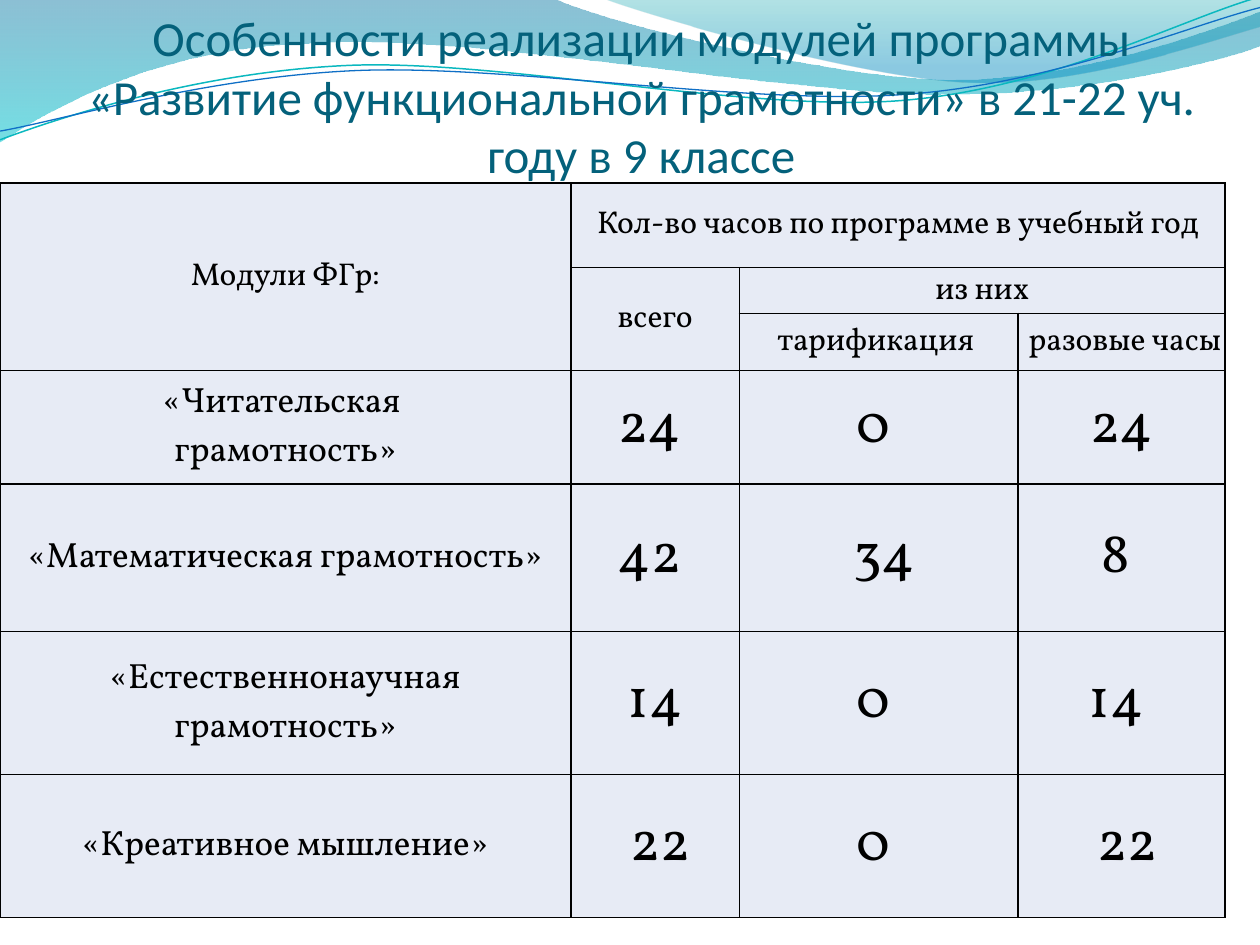
"""Builds the slide on the functional literacy modules of grade 9."""
from lxml.etree import SubElement
from pptx import Presentation
from pptx.dml.color import RGBColor
from pptx.enum.text import MSO_ANCHOR, PP_ALIGN
from pptx.oxml.ns import qn
from pptx.util import Pt

COLORS = {
    "title": "04617B", "text": "000000", "border": "000000", "cell": "E7EBF5",
    "blue": "0074A1", "cyan": "00C6CF", "teal": "00A1A9", "azure": "008BBF",
    "teal line": "0AB8BF", "blue line": "0F6FC6",
}
TITLE = "Особенности реализации модулей программы «Развитие функциональной грамотности» в 21-22 уч. году в 9 классе"
COLUMN_WIDTHS = [326.2, 96.4, 159.2, 118.4]
ROW_HEIGHTS = [48.4, 26.2, 32.6, 65, 84.2, 81.7, 81.7]
HEADER_ROWS = 3
ROWS = [
    ["Модули ФГр:", "Кол-во часов по программе в учебный год", "", ""],
    ["", "всего", "из них", ""],
    ["", "", "тарификация ", " разовые часы"],
    ["«Читательская \nграмотность»", "24 ", "0 ", "24"],
    ["«Математическая грамотность»", "42 ", " 34", "8 "],
    ["«Естественнонаучная грамотность»", "14", "0 ", "14 "],
    ["«Креативное мышление»", " 22", "0 ", " 22"],
]
MERGES = [((0, 0), (2, 0)), ((0, 1), (0, 3)), ((1, 1), (2, 1)), ((1, 2), (1, 3))]
WAVES = [
    ([(0, 0), (316.8, -0.7), (342.7, 12.2, 478.1, 45.4, 545.8, 45.4),
      (614.2, 45.4, 689.8, 18.7, 720, 6.5), (720.7, 25.9),
      (707.8, 31.7, 626.4, 54.7, 537.1, 54), (447.8, 54, 275, 20.2, 185, 24.5),
      (92.9, 25.9, 33.1, 59.8, -0.7, 81.4)],
     [(0, "blue", 45), (1, "cyan", 55)]),
    ([(344.9, -0.7), (366.5, 7.9, 491, 44.6, 553.7, 46.8),
      (616.3, 49.7, 691.9, 23, 720, 15.1), (720, 0)],
     [(0, "teal", 30), (0.8, "azure", 45)]),
]
STRANDS = [
    ([(0, 79.9), (34.6, 67, 113.8, 41, 199.4, 37.4),
      (284.4, 33.8, 427, 64.1, 513.4, 57.6), (599.8, 51.1, 675.4, 10.8, 718.6, -1.4)],
     "teal line", 0.85),
    ([(0, 74.9), (33.8, 69.1, 118.1, 43.9, 203.8, 40.3),
      (290.2, 36.7, 429.8, 60.5, 516.2, 54), (601.9, 48.2, 677.5, 15.1, 720, 4.3)],
     "blue line", 0.75),
]


def color(name):
    return RGBColor.from_string(COLORS[name])


def add_outline(slide, segments, close):
    anchors = [(Pt(segment[-2]), Pt(segment[-1])) for segment in segments]
    builder = slide.shapes.build_freeform(*anchors[0])
    builder.add_line_segments(anchors[1:], close=close)
    shape = builder.convert_to_shape()
    shape.shadow.inherit = False
    lines = list(shape._element.spPr.iter(qn("a:lnTo")))
    for line, segment in zip(lines, segments[1:]):
        if len(segment) == 6:
            line.tag = qn("a:cubicBezTo")
            controls = [SubElement(line, qn("a:pt"), x=str(Pt(x) - shape.left), y=str(Pt(y) - shape.top))
                        for x, y in (segment[:2], segment[2:4])]
            line[:] = controls + [line[0]]
    return shape


def add_wave(slide, segments, stops):
    shape = add_outline(slide, segments, True)
    shape.line.fill.background()
    shape.fill.gradient()
    shape.fill.gradient_angle = 270
    for stop, (position, name, _) in zip(shape.fill.gradient_stops, stops):
        stop.position = position
        stop.color.rgb = color(name)
    for element, (_, _, opacity) in zip(shape._element.spPr.iter(qn("a:srgbClr")), stops):
        SubElement(element, qn("a:alpha"), val=str(opacity * 1000))


def add_strand(slide, segments, name, width):
    shape = add_outline(slide, segments, False)
    shape.fill.background()
    shape.line.color.rgb = color(name)
    shape.line.width = Pt(width)


def write(frame, text, font, size, name):
    paragraph = frame.paragraphs[0]
    paragraph.alignment = PP_ALIGN.CENTER
    for index, line in enumerate(text.split("\n")):
        if index:
            paragraph.add_line_break()
        run = paragraph.add_run()
        run.text = line
        run.font.name = font
        run.font.size = Pt(size)
        run.font.color.rgb = color(name)


def add_title(slide):
    shape = slide.shapes.add_textbox(Pt(42.5), Pt(15), Pt(648), Pt(90))
    frame = shape.text_frame
    frame.word_wrap = True
    frame.vertical_anchor = MSO_ANCHOR.BOTTOM
    frame.margin_left = frame.margin_right = frame.margin_bottom = 0
    frame.margin_top = Pt(3.6)
    write(frame, TITLE, "Calibri", 28, "title")


def style_cell(cell):
    properties = cell._tc.get_or_add_tcPr()
    for side in ("lnL", "lnR", "lnT", "lnB"):
        line = SubElement(properties, qn(f"a:{side}"), w=str(Pt(1)))
        fill = SubElement(line, qn("a:solidFill"))
        SubElement(fill, qn("a:srgbClr"), val=COLORS["border"])
    cell.fill.solid()
    cell.fill.fore_color.rgb = color("cell")
    cell.vertical_anchor = MSO_ANCHOR.MIDDLE
    cell.margin_left = cell.margin_right = cell.margin_top = Pt(0.7)
    cell.margin_bottom = 0


def add_hours_table(slide):
    table = slide.shapes.add_table(
        len(ROWS), len(COLUMN_WIDTHS), 0, Pt(104.5),
        Pt(sum(COLUMN_WIDTHS)), Pt(sum(ROW_HEIGHTS))).table
    table.first_row = table.horz_banding = False
    for column, width in zip(table.columns, COLUMN_WIDTHS):
        column.width = Pt(width)
    for row, height in zip(table.rows, ROW_HEIGHTS):
        row.height = Pt(height)
    for row_index, row in enumerate(ROWS):
        for column_index, text in enumerate(row):
            cell = table.cell(row_index, column_index)
            style_cell(cell)
            if text:
                size = 18 if row_index < HEADER_ROWS else 32 if column_index else 20
                write(cell.text_frame, text, "Vollkorn", size, "text")
    for first, last in MERGES:
        table.cell(*first).merge(table.cell(*last))


def main():
    presentation = Presentation()
    presentation.slide_width, presentation.slide_height = Pt(720), Pt(540)
    slide = presentation.slides.add_slide(presentation.slide_layouts[6])
    for wave in WAVES:
        add_wave(slide, *wave)
    for strand in STRANDS:
        add_strand(slide, *strand)
    add_title(slide)
    add_hours_table(slide)
    presentation.save("out.pptx")


if __name__ == "__main__":
    main()
